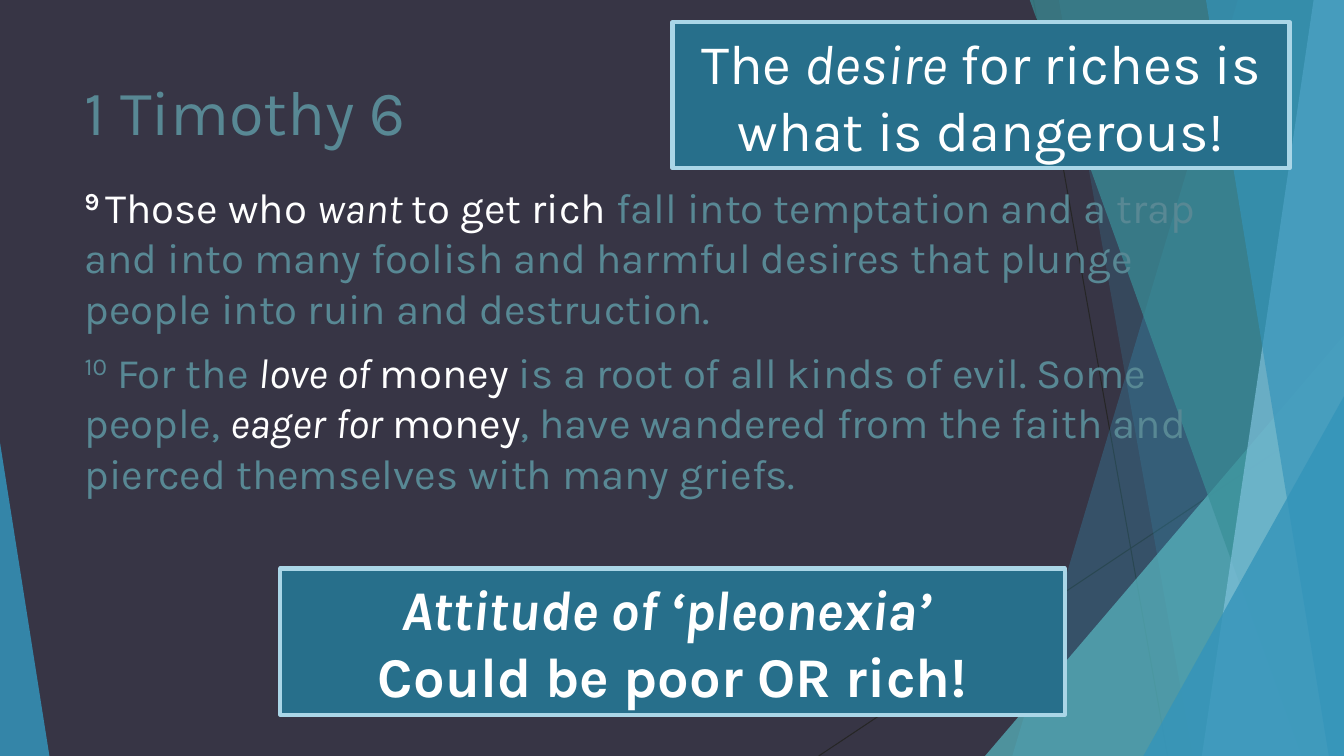
from lxml.etree import SubElement
from pptx import Presentation
from pptx.dml.color import RGBColor
from pptx.enum.shapes import MSO_CONNECTOR, MSO_SHAPE
from pptx.enum.text import MSO_ANCHOR, PP_ALIGN
from pptx.oxml.ns import qn
from pptx.util import Inches, Pt

# Content: each run is (text, style)
TITLE = [[("1 Timothy 6", "faded")]]
VERSES = [
    [("9 ", "verse_bold"), ("Those who ", "plain"), ("want ", "italic"),
     ("to get rich ", "plain"),
     ("fall into temptation and a trap and into many foolish and harmful "
      "desires that plunge people into ruin and destruction. ", "faded")],
    [("10", "verse_faded"), (" For the ", "faded"), ("love of ", "italic"),
     ("money ", "plain"),
     ("is a root of all kinds of evil. Some people, ", "faded"),
     ("eager for ", "italic"), ("money", "plain"),
     (", have wandered from the faith and pierced themselves with many griefs.",
      "faded")],
]
CALLOUTS = [
    ((6.67, 0.22, 6.12, 1.45),
     [[("The ", "plain"), ("desire", "italic"),
       (" for riches is what is dangerous!", "plain")]]),
    ((2.78, 5.64, 7.78, 1.45),
     [[("Attitude of ‘pleonexia’ ", "bold_italic")],
      [("Could be poor OR rich!", "bold")]]),
]

# Format values
WHITE, FADED = "FFFFFF", "588894"
STYLES = {
    "plain": {"color": WHITE},
    "italic": {"color": WHITE, "italic": True},
    "bold": {"color": WHITE, "bold": True},
    "bold_italic": {"color": WHITE, "bold": True, "italic": True},
    "faded": {"color": FADED},
    "verse_bold": {"color": WHITE, "bold": True, "raised": True},
    "verse_faded": {"color": FADED, "raised": True},
}
BODY_FRAME = {"word_wrap": True, "vertical_anchor": MSO_ANCHOR.TOP}
CALLOUT_FRAME = {"word_wrap": True, "vertical_anchor": MSO_ANCHOR.MIDDLE}

# Backdrop, back to front
WIDTH, HEIGHT, TOP = 13.33, 7.5, -0.01
HAIRLINES = [((10.25, 0), (11.58, HEIGHT)), ((WIDTH, 4.03), (8.12, HEIGHT))]
# A band runs to the right edge: (left at top, left at bottom)
# A wedge stands on the bottom edge: (left, top, width, apex position)
FACETS = [
    ("band", (12.28, 10.04), "3494BA", 30),
    ("band", (10.5, 11.83), "3494BA", 20),
    ("wedge", (9.77, 3.33, 3.56, 1), "58B6C0", 72),
    ("band", (10.21, 12.91), "3A8F98", 70),
    ("band", (13.03, 11.92), "7FC1DB", 70),
    ("band", (11.96, 13.18), "3494BA", 65),
    ("wedge", (11.34, 3.93, 1.99, 1), "3494BA", 80),
    ("wedge", (0, 4.39, 0.49, 0), "3494BA", 85),
]


def paint(color_format, color):
    color_format.rgb = RGBColor.from_string(color)


def fill_shape(shape, color, opacity=100):
    shape.shadow.inherit = False
    shape.fill.solid()
    paint(shape.fill.fore_color, color)
    if opacity < 100:
        srgb = shape.fill._xPr.find(qn("a:solidFill"))[0]
        SubElement(srgb, qn("a:alpha")).set("val", str(opacity * 1000))


def write(frame, paragraphs, size, frame_format, paragraph_format):
    for name, value in frame_format.items():
        setattr(frame, name, value)
    for index, runs in enumerate(paragraphs):
        paragraph = frame.add_paragraph() if index else frame.paragraphs[0]
        for name, value in paragraph_format.items():
            setattr(paragraph, name, value)
        for text, style in runs:
            run = paragraph.add_run()
            run.text = text
            look = {"name": "Karla", "size": Pt(size), "bold": False,
                    "italic": False, **STYLES[style]}
            paint(run.font.color, look.pop("color"))
            if look.pop("raised", False):
                run.font._element.set("baseline", "30000")
            for name, value in look.items():
                setattr(run.font, name, value)


def add_text(slide, box, paragraphs, size, paragraph_format):
    frame = slide.shapes.add_textbox(*map(Inches, box)).text_frame
    write(frame, paragraphs, size, BODY_FRAME, paragraph_format)


def add_hairline(slide, start, end):
    line = slide.shapes.add_connector(
        MSO_CONNECTOR.STRAIGHT, *map(Inches, start + end))
    paint(line.line.color, "262626")
    line.line.width = Pt(0.75)
    SubElement(line._element.spPr, qn("a:effectLst"))


def add_facet(slide, kind, place, color, opacity):
    if kind == "band":
        top_left, bottom_left = place
        corners = [(WIDTH, TOP), (WIDTH, HEIGHT), (bottom_left, HEIGHT)]
        builder = slide.shapes.build_freeform(
            Inches(top_left), Inches(TOP), scale=1.0)
        builder.add_line_segments(
            [(Inches(x), Inches(y)) for x, y in corners], close=True)
        facet = builder.convert_to_shape()
    else:
        left, top, width, apex = place
        facet = slide.shapes.add_shape(
            MSO_SHAPE.ISOSCELES_TRIANGLE,
            *map(Inches, (left, top, width, HEIGHT - top)))
        facet.adjustments[0] = apex
    fill_shape(facet, color, opacity)
    facet.line.fill.background()


def add_callout(slide, box, paragraphs):
    callout = slide.shapes.add_shape(MSO_SHAPE.RECTANGLE, *map(Inches, box))
    fill_shape(callout, "276F8B")
    paint(callout.line.color, "AAD6E7")
    callout.line.width = Pt(3)
    write(callout.text_frame, paragraphs, 40, CALLOUT_FRAME,
          {"alignment": PP_ALIGN.CENTER})


def main():
    deck = Presentation()
    deck.slide_width, deck.slide_height = Inches(WIDTH), Inches(HEIGHT)
    slide = deck.slides.add_slide(deck.slide_layouts[6])
    slide.background.fill.solid()
    paint(slide.background.fill.fore_color, "373545")

    for start, end in HAIRLINES:
        add_hairline(slide, start, end)
    for facet in FACETS:
        add_facet(slide, *facet)

    add_text(slide, (0.74, 0.67, 9.4, 1.05), TITLE, 45, {})
    add_text(slide, (0.74, 1.75, 11.85, 4.81), VERSES, 30,
             {"space_before": Pt(10)})
    for box, paragraphs in CALLOUTS:
        add_callout(slide, box, paragraphs)
    deck.save("out.pptx")


if __name__ == "__main__":
    main()
